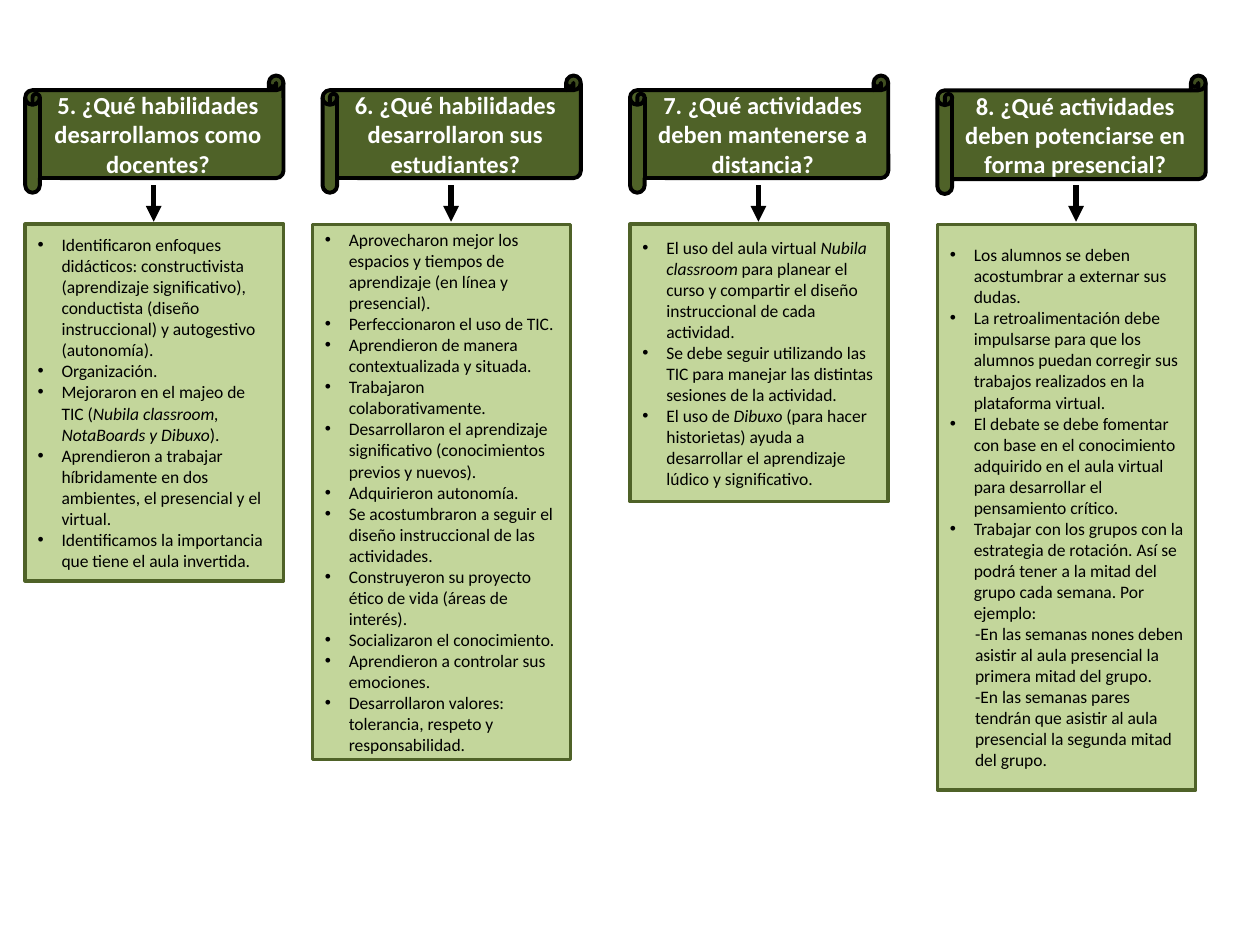
from lxml import etree
from pptx import Presentation
from pptx.dml.color import RGBColor
from pptx.enum.shapes import MSO_CONNECTOR, MSO_SHAPE
from pptx.enum.text import MSO_ANCHOR, PP_ALIGN
from pptx.oxml.ns import qn
from pptx.util import Inches, Pt

HUES = {"dark": "4F6228", "pale": "C3D69B", "ink": "000000", "white": "FFFFFF"}
HEAD = {"size": Pt(14), "bold": True, "name": "Calibri"}
BODY = {"size": Pt(10), "bold": False, "name": "Calibri"}

# Column places: scroll (left, width, height), arrow x, list (left, height)
# In the lists, *stars* mark italics and a leading "-" marks a plain sub-item
COLUMNS = [
    {"scroll": (0.2, 2.05, 0.93), "arrow": 1.22, "list": (0.2, 2.83),
     "title": "5. ¿Qué habilidades desarrollamos como docentes?",
     "items": [
         "Identificaron enfoques didácticos: constructivista (aprendizaje significativo), "
         "conductista (diseño instruccional) y autogestivo (autonomía).",
         "Organización.",
         "Mejoraron en el majeo de TIC (*Nubila classroom, NotaBoards y Dibuxo*).",
         "Aprendieron a trabajar híbridamente en dos ambientes, el presencial y el virtual.",
         "Identificamos la importancia que tiene el aula invertida.",
     ]},
    {"scroll": (2.56, 2.05, 0.93), "arrow": 3.58, "list": (2.48, 4.25),
     "title": "6. ¿Qué habilidades desarrollaron sus estudiantes?",
     "items": [
         "Aprovecharon mejor los espacios y tiempos de aprendizaje (en línea y presencial).",
         "Perfeccionaron el uso de TIC.",
         "Aprendieron de manera contextualizada y situada.",
         "Trabajaron colaborativamente.",
         "Desarrollaron el aprendizaje significativo (conocimientos previos y nuevos).",
         "Adquirieron autonomía.",
         "Se acostumbraron a seguir el diseño instruccional de las actividades.",
         "Construyeron su proyecto ético de vida (áreas de interés).",
         "Socializaron el conocimiento.",
         "Aprendieron a controlar sus emociones.",
         "Desarrollaron valores: tolerancia, respeto y responsabilidad.",
     ]},
    {"scroll": (5, 2.05, 0.93), "arrow": 6.02, "list": (5, 2.2),
     "title": "7. ¿Qué actividades deben mantenerse a distancia?",
     "items": [
         "El uso del aula virtual *Nubila classroom* para planear el curso y compartir "
         "el diseño instruccional de cada actividad.",
         "Se debe seguir utilizando las TIC para manejar las distintas sesiones de la actividad.",
         "El uso de *Dibuxo* (para hacer historietas) ayuda a desarrollar el aprendizaje "
         "lúdico y significativo.",
     ]},
    {"scroll": (7.44, 2.13, 0.94), "arrow": 8.54, "list": (7.44, 4.49),
     "title": "8. ¿Qué actividades deben potenciarse en forma presencial?",
     "items": [
         "Los alumnos se deben acostumbrar a externar sus dudas.",
         "La retroalimentación debe impulsarse para que los alumnos puedan corregir sus "
         "trabajos realizados en la plataforma virtual.",
         "El debate se debe fomentar con base en el conocimiento adquirido en el aula "
         "virtual para desarrollar el pensamiento crítico.",
         "Trabajar con los grupos con la estrategia de rotación. Así se podrá tener a la "
         "mitad del grupo cada semana. Por ejemplo:",
         "-En las semanas nones deben asistir al aula presencial la primera mitad del grupo.",
         "-En las semanas pares tendrán que asistir al aula presencial la segunda mitad del grupo.",
     ]},
]


def hue(name):
    return RGBColor.from_string(HUES[name])


def add_box(slide, kind, box, fill, edge, weight):
    shape = slide.shapes.add_shape(kind, *map(Inches, box))
    shape.shadow.inherit = False
    shape.fill.solid()
    shape.fill.fore_color.rgb = hue(fill)
    shape.line.color.rgb = hue(edge)
    shape.line.width = Pt(weight)
    shape.text_frame.word_wrap = True
    shape.text_frame.vertical_anchor = MSO_ANCHOR.MIDDLE
    return shape.text_frame


def add_text(para, text, look, color):
    # Every second part between stars is italic
    for i, part in enumerate(text.split("*")):
        run = para.add_run()
        run.text = part
        for key, value in {**look, "italic": i % 2 == 1}.items():
            setattr(run.font, key, value)
        run.font.color.rgb = hue(color)


def set_bullet(para, plain):
    props = para._p.get_or_add_pPr()
    props.set("marL", str(Inches(0.2 if plain else 0.19)))
    props.set("indent", str(0 if plain else Inches(-0.19)))
    if plain:
        etree.SubElement(props, qn("a:buNone"))
    else:
        etree.SubElement(props, qn("a:buFont"), typeface="Arial")
        etree.SubElement(props, qn("a:buChar"), char="•")


def add_scroll(slide, box, title):
    frame = add_box(slide, MSO_SHAPE.HORIZONTAL_SCROLL, box, "dark", "ink", 2.25)
    para = frame.paragraphs[0]
    para.alignment = PP_ALIGN.CENTER
    add_text(para, title, HEAD, "white")


def add_list(slide, box, items):
    frame = add_box(slide, MSO_SHAPE.RECTANGLE, box, "pale", "dark", 2)
    for i, item in enumerate(items):
        para = frame.add_paragraph() if i else frame.paragraphs[0]
        para.alignment = PP_ALIGN.LEFT
        set_bullet(para, item.startswith("-"))
        add_text(para, item, BODY, "ink")


def add_arrow(slide, x, top, end):
    ends = map(Inches, (x, top, x, end))
    link = slide.shapes.add_connector(MSO_CONNECTOR.STRAIGHT, *ends)
    link.line.color.rgb = hue("ink")
    link.line.width = Pt(3)
    etree.SubElement(link.line._get_or_add_ln(), qn("a:tailEnd"), type="triangle")
    etree.SubElement(link._element.spPr, qn("a:effectLst"))


def add_column(slide, col):
    left, width, height = col["scroll"]
    add_scroll(slide, (left, 0.6, width, height), col["title"])
    left, height = col["list"]
    add_list(slide, (left, 1.78, 2.05, height), col["items"])
    add_arrow(slide, col["arrow"], 1.47, 1.76)


def main():
    deck = Presentation()
    deck.slide_width, deck.slide_height = Inches(10), Inches(7.5)
    slide = deck.slides.add_slide(deck.slide_layouts[6])
    for col in COLUMNS:
        add_column(slide, col)
    deck.save("out.pptx")


if __name__ == "__main__":
    main()
